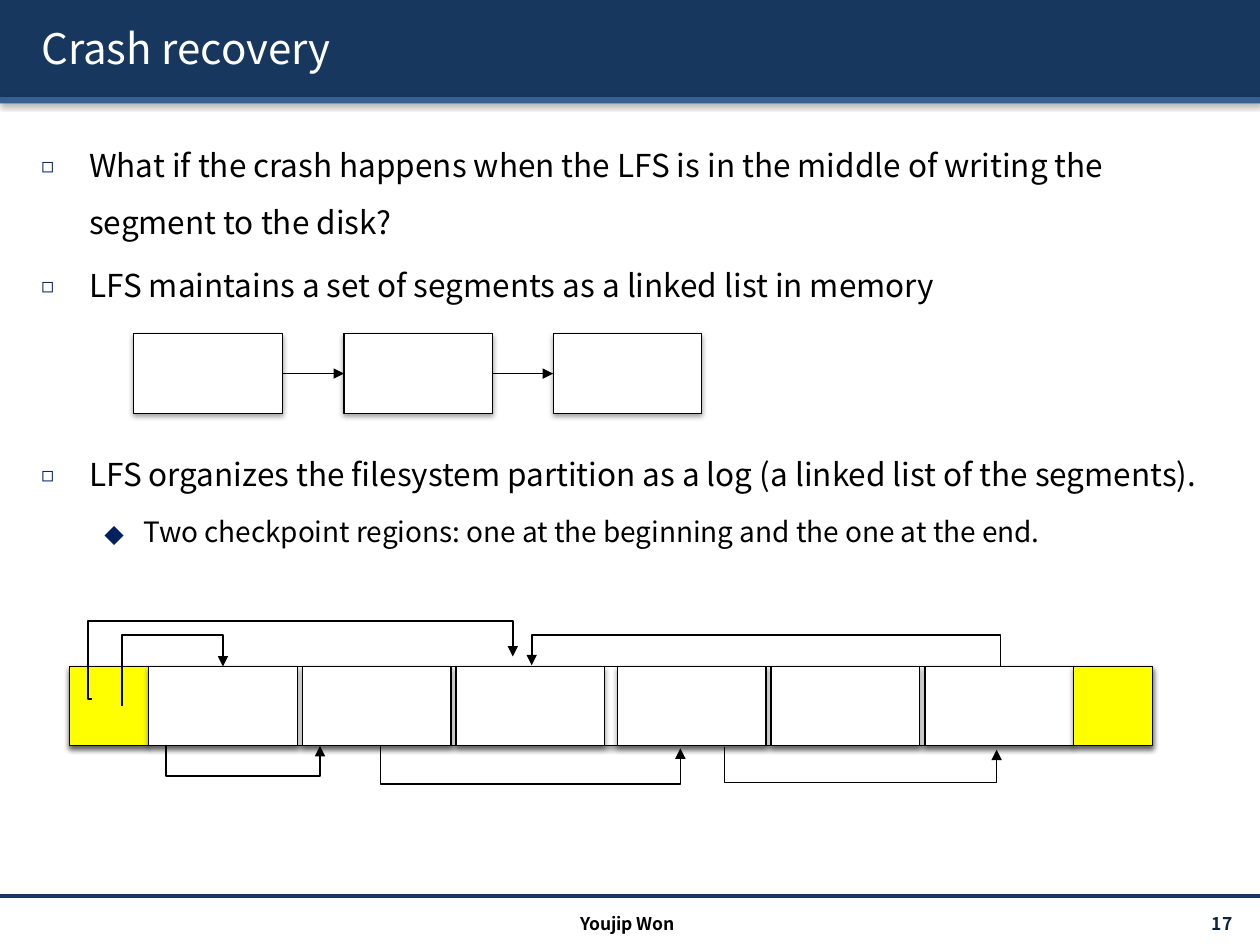
from lxml import etree
from pptx import Presentation
from pptx.dml.color import RGBColor
from pptx.enum.shapes import MSO_CONNECTOR, MSO_SHAPE
from pptx.enum.text import MSO_ANCHOR, PP_ALIGN
from pptx.oxml.ns import qn
from pptx.util import Inches, Pt

RECTANGLE = MSO_SHAPE.RECTANGLE
STRAIGHT = MSO_CONNECTOR.STRAIGHT
TOP, MIDDLE = MSO_ANCHOR.TOP, MSO_ANCHOR.MIDDLE
LEFT, CENTER, RIGHT = PP_ALIGN.LEFT, PP_ALIGN.CENTER, PP_ALIGN.RIGHT

FONT = "Noto Sans CJK KR"
NAVY, BLUE, BULLET = "17375E", "376092", "002060"
BLACK, WHITE, YELLOW = "000000", "FFFFFF", "FFFF00"
SEGMENT_W, CHECKPOINT_W, BLOCK_H = 1.18, 0.63, 0.63
LIST_TOP, LOG_TOP, LOG_LEFT, LOG_W = 2.65, 5.29, 0.55, 8.6


def color(hex_value):
    return RGBColor.from_string(hex_value)


def add_shadow(parent, blur, distance, direction, alpha):
    effects = parent.find(qn("a:effectLst"))
    if effects is None:
        effects = etree.SubElement(parent, qn("a:effectLst"))
    shadow = etree.SubElement(
        effects, qn("a:outerShdw"), blurRad=str(Pt(blur)),
        dist=str(Pt(distance)), dir=str(direction * 60000), rotWithShape="0")
    tint = etree.SubElement(shadow, qn("a:srgbClr"), val=BLACK)
    etree.SubElement(tint, qn("a:alpha"), val=str(alpha * 1000))


def add_block(slide, left, top, width, height, fill, outlined=True):
    block = slide.shapes.add_shape(
        RECTANGLE, Inches(left), Inches(top), Inches(width), Inches(height))
    block.fill.solid()
    block.fill.fore_color.rgb = color(fill)
    if outlined:
        block.line.color.rgb = color(BLACK)
        block.line.width = Pt(0.75)
    else:
        block.line.fill.background()
    block.shadow.inherit = False
    add_shadow(block._element.spPr, 3.1, 1.6, 90, 38)


def style_line(line, hex_value, width, arrow):
    line.color.rgb = color(hex_value)
    line.width = Pt(width)
    if arrow:
        etree.SubElement(line._get_or_add_ln(), qn("a:tailEnd"), type="triangle")


def add_line(slide, start, end, hex_value, width, arrow=False):
    link = slide.shapes.add_connector(
        STRAIGHT, *[Inches(value) for value in (*start, *end)])
    style_line(link.line, hex_value, width, arrow)
    etree.SubElement(link._element.spPr, qn("a:effectLst"))


def add_pointer(slide, *points):
    start, *rest = [(Inches(x), Inches(y)) for x, y in points]
    outline = slide.shapes.build_freeform(*start)
    outline.add_line_segments(rest, close=False)
    pointer = outline.convert_to_shape()
    pointer.fill.background()
    style_line(pointer.line, BLACK, 1, True)
    pointer.shadow.inherit = False


def add_frame(slide, left, top, width, height, anchor=TOP):
    frame = slide.shapes.add_textbox(
        Inches(left), Inches(top), Inches(width), Inches(height)).text_frame
    frame.word_wrap = True
    frame.vertical_anchor = anchor
    return frame


def add_run(paragraph, text, size, hex_value=BLACK, bold=False):
    run = paragraph.add_run()
    run.text = text
    run.font.name = FONT
    run.font.size = Pt(size)
    run.font.bold = bold
    run.font.color.rgb = color(hex_value)
    return run


def add_label(slide, box, text, size, hex_value, align, anchor, bold):
    paragraph = add_frame(slide, *box, anchor).paragraphs[0]
    paragraph.alignment = align
    return add_run(paragraph, text, size, hex_value, bold)


def add_bullet(paragraph, text, size, mark, indent, hanging, mark_size, before):
    props = paragraph._p.get_or_add_pPr()
    props.set("marL", str(Inches(indent)))
    props.set("indent", str(-Inches(hanging)))
    tint = etree.SubElement(props, qn("a:buClr"))
    etree.SubElement(tint, qn("a:srgbClr"), val=BULLET)
    etree.SubElement(props, qn("a:buSzPct"), val=str(mark_size * 1000))
    etree.SubElement(props, qn("a:buFont"), typeface=FONT)
    etree.SubElement(props, qn("a:buChar"), char=mark)
    paragraph.line_spacing = 1.5
    paragraph.space_before = Pt(before)
    add_run(paragraph, text, size)


def add_body(slide):
    frame = add_frame(slide, 0.23, 0.96, 9.61, 6.02)
    main_style = (18, "◻", 0.38, 0.38, 65)
    sub_style = (16, "⬥", 0.81, 0.31, 100)
    points = [
        ("What if the crash happens when the LFS is in the middle of writing "
         "the segment to the disk?", main_style, 0),
        ("LFS maintains a set of segments as a linked list in memory",
         main_style, 3.6),
        ("LFS organizes the filesystem partition as a log "
         "(a linked list of the segments).", main_style, 75.5),
        ("Two checkpoint regions: one at the beginning and the one at the end.",
         sub_style, 3.2),
    ]
    for index, (text, style, before) in enumerate(points):
        paragraph = frame.add_paragraph() if index else frame.paragraphs[0]
        add_bullet(paragraph, text, *style, before)


def add_header_and_footer(slide):
    add_block(slide, 0, 0, 10, 0.77, NAVY, outlined=False)
    add_block(slide, 0, 0.77, 10, 0.05, BLUE, outlined=False)
    add_line(slide, (0, 7.11), (10, 7.11), NAVY, 2)
    title = add_label(slide, (0.23, 0.06, 9.61, 0.64), "Crash recovery",
                      24, WHITE, LEFT, MIDDLE, False)
    title_props = title._r.get_or_add_rPr()
    add_shadow(title_props, 3, 3, 45, 100)
    title_props.insert(1, title_props.find(qn("a:effectLst")))
    add_label(slide, (8.71, 7.21, 1.17, 0.24), "17", 10, "0F243E",
              RIGHT, MIDDLE, True)
    add_label(slide, (3.32, 7.2, 3.32, 0.24), "Youjip Won", 10, BLACK,
              CENTER, TOP, True)


def add_memory_list(slide):
    lefts = [1.06, 2.73, 4.39]
    for left in lefts:
        add_block(slide, left, LIST_TOP, SEGMENT_W, BLOCK_H, WHITE)
    middle = LIST_TOP + BLOCK_H / 2
    for left, following in zip(lefts, lefts[1:]):
        add_line(slide, (left + SEGMENT_W, middle), (following, middle),
                 BLACK, 1, arrow=True)


def add_disk_log(slide):
    add_block(slide, LOG_LEFT, LOG_TOP, LOG_W, BLOCK_H, WHITE)
    add_block(slide, LOG_LEFT, LOG_TOP, CHECKPOINT_W, BLOCK_H, YELLOW)
    for group_left in (1.18, 4.9):
        for index in range(3):
            add_block(slide, group_left + index * 1.22, LOG_TOP,
                      SEGMENT_W, BLOCK_H, WHITE)
    add_block(slide, LOG_LEFT + LOG_W - CHECKPOINT_W, LOG_TOP,
              CHECKPOINT_W, BLOCK_H, YELLOW)

    routes = [
        (1.32, 5.91, 6.16, 2.54, 5.92),
        (3.02, 5.92, 6.22, 5.4, 5.94),
        (5.75, 5.93, 6.21, 7.91, 5.95),
        (7.94, 5.29, 5.04, 4.22, 5.28),
        (0.97, 5.6, 5.04, 1.77, 5.29),
    ]
    for start_x, start_y, turn_y, end_x, end_y in routes:
        add_pointer(slide, (start_x, start_y), (start_x, turn_y),
                    (end_x, turn_y), (end_x, end_y))
    add_pointer(slide, (0.73, 5.55), (0.7, 5.55), (0.7, 4.93),
                (4.07, 4.93), (4.07, 5.21))


def main():
    deck = Presentation()
    deck.slide_width, deck.slide_height = Inches(10), Inches(7.5)
    slide = deck.slides.add_slide(deck.slide_layouts[6])
    add_header_and_footer(slide)
    add_body(slide)
    add_disk_log(slide)
    add_memory_list(slide)
    deck.save("out.pptx")


if __name__ == "__main__":
    main()
